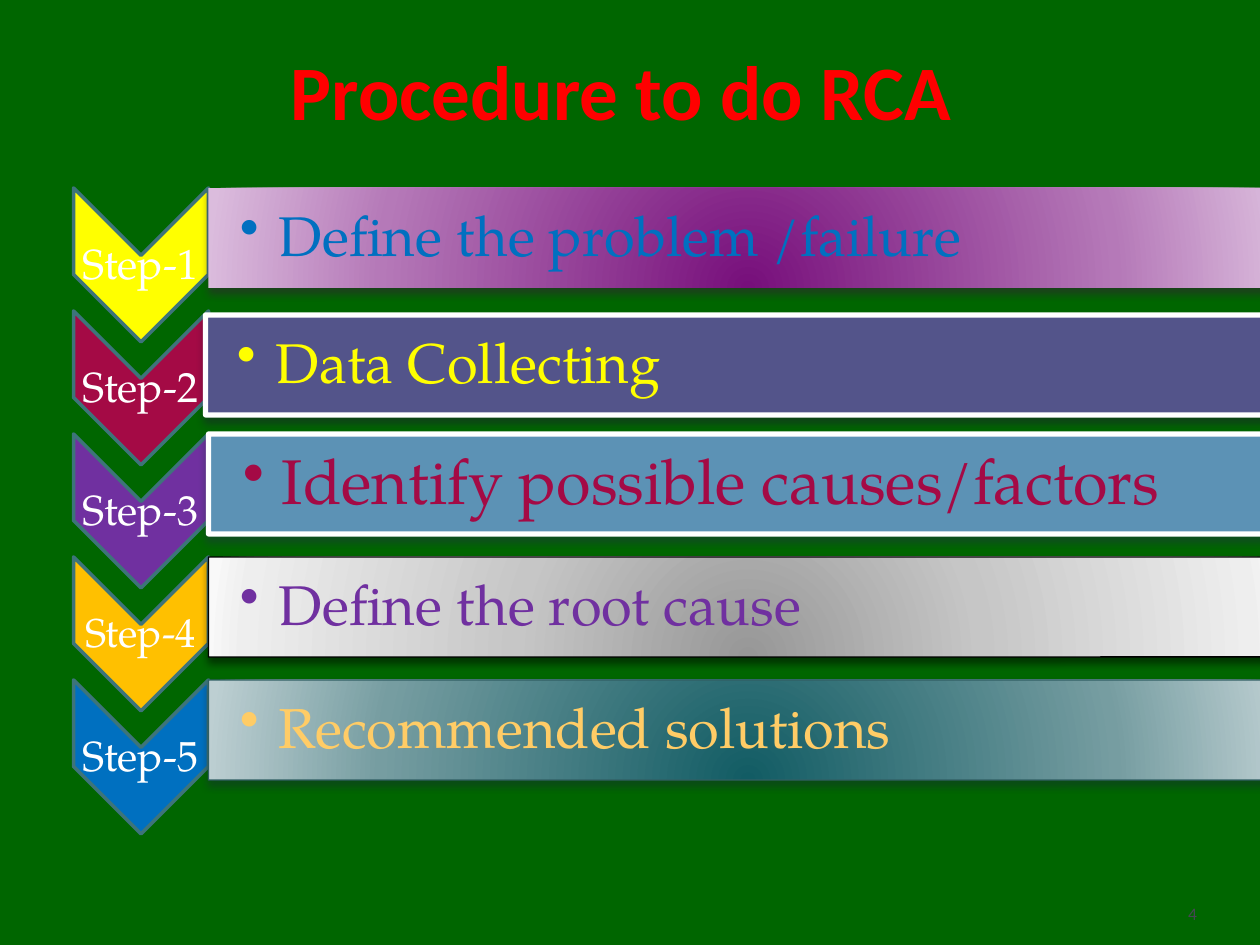
from lxml.etree import SubElement
from pptx import Presentation
from pptx.dml.color import RGBColor
from pptx.enum.shapes import MSO_SHAPE as Shape
from pptx.enum.text import MSO_ANCHOR as Anchor, PP_ALIGN as Align
from pptx.oxml import parse_xml
from pptx.oxml.ns import nsdecls, qn
from pptx.util import Emu, Pt

SERIF = "TeX Gyre Pagella"
PITCH = 123
COLORS = {
    "background": "006600", "title": "FF0000", "label": "FFFFFF",
    "chevron_edge": "3D747A", "number": "464653",
}
STEPS = [
    dict(chevron="FFFF00", text="Define the problem /failure", color="0070C0",
         fill=[(0, "770F7B"), (68, "B579B8"), (100, "DBBCDD")], shadow="391A3A"),
    dict(chevron="A40A45", text="Data Collecting", color="FFFF00",
         fill="53548A", edge=("FFFFFF", 3), shadow="1D1D31", shift=(-3, 4)),
    dict(chevron="7030A0", text="Identify possible causes/factors", color="A40A45",
         size=36, inset=35, fill="5C92B5", edge=("FFFFFF", 3), shadow="203340"),
    dict(chevron="FFC000", text="Define the root cause", color="7030A0", label_size=23,
         fill=[(0, "979797"), (43, "C6C6C6"), (93, "EEEEEE"), (100, "F9F9F9")],
         edge=("000000", 0.75), shadow="000000"),
    dict(chevron="0070C0", text="Recommended solutions", color="FFCC66",
         fill=[(0, "125C64"), (68, "769DA1"), (100, "BDCFD2")],
         edge=("315F64", 0.75), shadow="172D30"),
]


def px(length):
    return Emu(round(length * 914400 / 126))


def rgb(color):
    return RGBColor.from_string(color)


def set_font(paragraph, name, size, color, bold=False):
    font = paragraph.font
    font.name, font.size, font.bold = name, Pt(size), bold
    font.color.rgb = rgb(color)


def set_frame(frame, anchor, left=3, top=3, right=3, bottom=3):
    frame.word_wrap = True
    frame.vertical_anchor = anchor
    frame.margin_left, frame.margin_top = px(left), px(top)
    frame.margin_right, frame.margin_bottom = px(right), px(bottom)


def fill_radial(shape, stops):
    shape.fill.gradient()
    properties = shape._element.spPr
    stop_xml = "".join(
        f'<a:gs pos="{position * 1000}"><a:srgbClr val="{color}"/></a:gs>'
        for position, color in stops)
    radial = parse_xml(
        f'<a:gradFill {nsdecls("a")} rotWithShape="1"><a:gsLst>{stop_xml}</a:gsLst>'
        '<a:path path="circle"><a:fillToRect l="50000" t="130000" r="50000" b="-30000"/>'
        '</a:path></a:gradFill>')
    properties.replace(properties.find(qn("a:gradFill")), radial)


def add_shadow(shape, color):
    effects = shape._element.spPr.find(qn("a:effectLst"))
    outer = SubElement(effects, qn("a:outerShdw"), blurRad=str(Pt(4.5)),
                       dist=str(Pt(3)), dir="5400000", rotWithShape="0")
    tint = SubElement(outer, qn("a:srgbClr"), val=color)
    SubElement(tint, qn("a:alpha"), val="48000")


def add_turned(slide, kind, center_x, center_y, width, height, fill, edge):
    shape = slide.shapes.add_shape(kind, px(center_x - width / 2), px(center_y - height / 2),
                                   px(width), px(height))
    shape.rotation = 90
    shape.shadow.inherit = False
    if isinstance(fill, str):
        shape.fill.solid()
        shape.fill.fore_color.rgb = rgb(fill)
    else:
        fill_radial(shape, fill)
    if edge:
        shape.line.color.rgb, shape.line.width = rgb(edge[0]), Pt(edge[1])
    else:
        shape.line.fill.background()
    return shape


def add_text(slide, box, text, size, color, inset=3):
    frame = slide.shapes.add_textbox(*map(px, box)).text_frame
    set_frame(frame, Anchor.MIDDLE, left=inset)
    paragraph = frame.paragraphs[0]
    paragraph.text = text
    paragraph.line_spacing = 0.9
    set_font(paragraph, SERIF, size, color)
    return paragraph


def add_bullet(paragraph):
    properties = paragraph._p.get_or_add_pPr()
    properties.set("marL", str(px(39)))
    properties.set("indent", str(px(-39)))
    bullet = parse_xml(f'<a:buChar {nsdecls("a")} char="•"/>')
    properties.find(qn("a:defRPr")).addprevious(bullet)


def add_step(slide, index, step):
    drop = index * PITCH
    add_turned(slide, Shape.CHEVRON, 141, 265 + drop, 154, 135,
               step["chevron"], (COLORS["chevron_edge"], 2))
    label = add_text(slide, (73, 243 + drop, 135, 45), f"Step-{index + 1}",
                     step.get("label_size", 24), COLORS["label"])
    label.alignment = Align.CENTER

    shift_x, shift_y = step.get("shift", (0, 0))
    middle = 238 + drop + shift_y
    bar = add_turned(slide, Shape.ROUND_2_SAME_RECTANGLE, 748 + shift_x, middle,
                     100, 1079, step["fill"], step.get("edge"))
    add_shadow(bar, step["shadow"])
    action = add_text(slide, (208 + shift_x, middle - 45, 1072, 90), step["text"],
                      step.get("size", 32), step["color"], step.get("inset", 32))
    add_bullet(action)


def add_title(slide, text):
    title = slide.shapes.title
    title.left, title.top, title.width, title.height = map(px, (63, 0, 1134, 136))
    set_frame(title.text_frame, Anchor.BOTTOM, 0, 6, 0, 0)
    paragraph = title.text_frame.paragraphs[0]
    paragraph.text = text
    paragraph.alignment = Align.CENTER
    set_font(paragraph, "Calibri", 44, COLORS["title"], bold=True)


def add_page_number(slide, number):
    paragraph = add_text(slide, (1134, 896, 66, 38), str(number), 10, COLORS["number"])
    paragraph.alignment = Align.RIGHT
    paragraph.font.name = "Calibri"


def main():
    deck = Presentation()
    deck.slide_width, deck.slide_height = px(1260), px(945)
    slide = deck.slides.add_slide(deck.slide_layouts[5])
    slide.background.fill.solid()
    slide.background.fill.fore_color.rgb = rgb(COLORS["background"])
    add_title(slide, "Procedure to do RCA ")
    for index, step in enumerate(STEPS):
        add_step(slide, index, step)
    add_page_number(slide, 4)
    deck.save("out.pptx")


if __name__ == "__main__":
    main()
